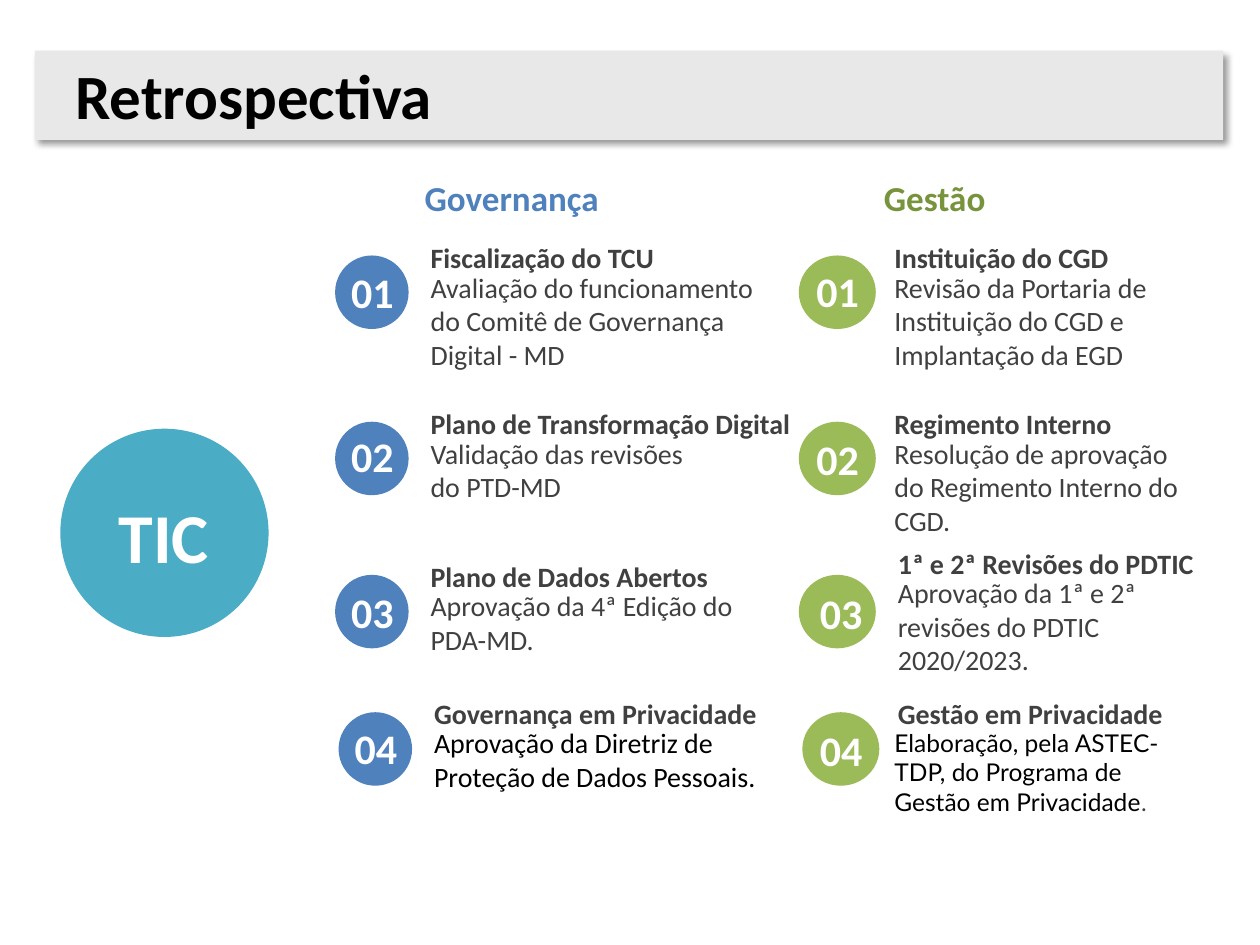
from lxml import etree
from pptx import Presentation
from pptx.dml.color import RGBColor
from pptx.enum import shapes, text
from pptx.oxml.ns import qn
from pptx.util import Pt

HUES = {"bar": "E8E8E8", "black": "000000", "gray": "404040", "white": "FFFFFF",
        "teal": "4BACC6", "blue": "4F81BD", "green": "9BBB59", "olive": "77933C"}

# Each item: title, body, title top, title width, body width
COLS = [
    {"hue": "blue", "disc": 191.5, "wide": 42, "num": 184.3, "numw": 57, "left": 239,
     "shift": [0, 0, 0, 2], "nudge": [0, -1.4, 0, -1],
     "items": [
         ("Fiscalização do TCU",
          "Avaliação do funcionamento do Comitê de Governança Digital - MD", 134, 212.4, 212.4),
         ("Plano de Transformação Digital",
          "Validação das revisões do PTD-MD", 229, 222, 177),
         ("Plano de Dados Abertos",
          "Aprovação da 4ª Edição do PDA-MD.", 316, 188, 188),
         ("Governança em Privacidade",
          "Aprovação da Diretriz de Proteção de Dados Pessoais.", 394.5, 201.6, 201.6)]},
    {"hue": "green", "disc": 456.5, "wide": 44, "num": 448.6, "numw": 60, "left": 504,
     "shift": [0, 0, 2, 2], "nudge": [-0.7, 0, 0.5, 0.5],
     "items": [
         ("Instituição do CGD",
          "Revisão da Portaria de Instituição do CGD e Implantação da EGD", 134, 183, 183),
         ("Regimento Interno",
          "Resolução de aprovação do Regimento Interno do CGD.", 229, 169, 176.4),
         ("1ª e 2ª Revisões do PDTIC",
          "Aprovação da 1ª e 2ª revisões do PDTIC 2020/2023.", 308.5, 188, 181),
         ("Gestão em Privacidade",
          "Elaboração, pela ASTEC-TDP, do Programa de Gestão em Privacidade",
          394.5, 176.4, 187)]},
]
TOPS = [146, 241, 328.5, 407]
DISC = 42
STEP = 16.8

deck = Presentation()
deck.slide_width, deck.slide_height = Pt(720), Pt(540)
page = deck.slides.add_slide(deck.slide_layouts[6])


def style(run, size, hue, bold=False, face="Calibri"):
    run.font.name, run.font.size, run.font.bold = face, Pt(size), bold
    run.font.color.rgb = RGBColor.from_string(HUES[hue])


def shape(kind, x, y, w, h, hue):
    item = page.shapes.add_shape(kind, Pt(x), Pt(y), Pt(w), Pt(h))
    item.shadow.inherit = False
    item.fill.solid()
    item.fill.fore_color.rgb = RGBColor.from_string(HUES[hue])
    item.line.fill.background()
    return item


def label(words, x, y, w, h, size, hue, bold=False, mid=False, center=False, face="Calibri"):
    frame = page.shapes.add_textbox(Pt(x), Pt(y), Pt(w), Pt(h)).text_frame
    frame.word_wrap = True
    if mid:
        frame.vertical_anchor = text.MSO_ANCHOR.MIDDLE
    frame.text = words
    para = frame.paragraphs[0]
    if center:
        para.alignment = text.PP_ALIGN.CENTER
    style(para.runs[0], size, hue, bold, face)
    return para


# Title bar with its soft shadow
bar = shape(shapes.MSO_SHAPE.RECTANGLE, 20, 29, 679, 51, "bar")
glow = etree.SubElement(bar._element.spPr.find(qn("a:effectLst")), qn("a:outerShdw"),
                        blurRad=str(Pt(4)), dist=str(Pt(3)), dir="2700000", algn="tl")
tint = etree.SubElement(glow, qn("a:srgbClr"), val=HUES["black"])
etree.SubElement(tint, qn("a:alpha"), val="40000")
label("Retrospectiva", 36, 29, 648, 49.5, 36, "black", True, True)

# Main circle
shape(shapes.MSO_SHAPE.OVAL, 34.5, 245, 119, 119, "teal")
label("TIC", 55.5, 278.5, 76, 55.5, 40, "white", True, True, True)

# Column headings, set apart by a tab stop
head = label("Governança", 235.5, 97.2, 389.5, 31.5, 20, "blue", True, True)
tabs = etree.SubElement(head._p.get_or_add_pPr(), qn("a:tabLst"))
etree.SubElement(tabs, qn("a:tab"), pos=str(Pt(262.5)), algn="l")
more = head.add_run()
more.text = "\tGestão"
style(more, 20, "olive", True)

# Numbered items in both columns
for col in COLS:
    rows = zip(TOPS, col["shift"], col["nudge"], col["items"])
    for num, (top, shift, nudge, item) in enumerate(rows, 1):
        title, body, y, wide, span = item
        last = col["hue"] == "green" and num == 4
        push = 2 if num == 4 else 0
        shape(shapes.MSO_SHAPE.OVAL, col["disc"] + push, top, col["wide"], DISC, col["hue"])
        label(f"{num:02}", col["num"] + shift, top + DISC / 2 - 18 + nudge,
              col["numw"], 36, 24, "white", True, True, True)
        x = col["left"] + shift
        label(title, x, y, wide, 26.5, 16, "gray", True)
        if last:
            para = label(body, col["left"], y + 18, span, 58, 14, "black", face="Lato")
            stop = para.add_run()
            stop.text = "."
            style(stop, 14, "gray")
        else:
            label(body, x, y + STEP, span, 65.5, 16, "black" if num == 4 else "gray")

deck.save("out.pptx")
